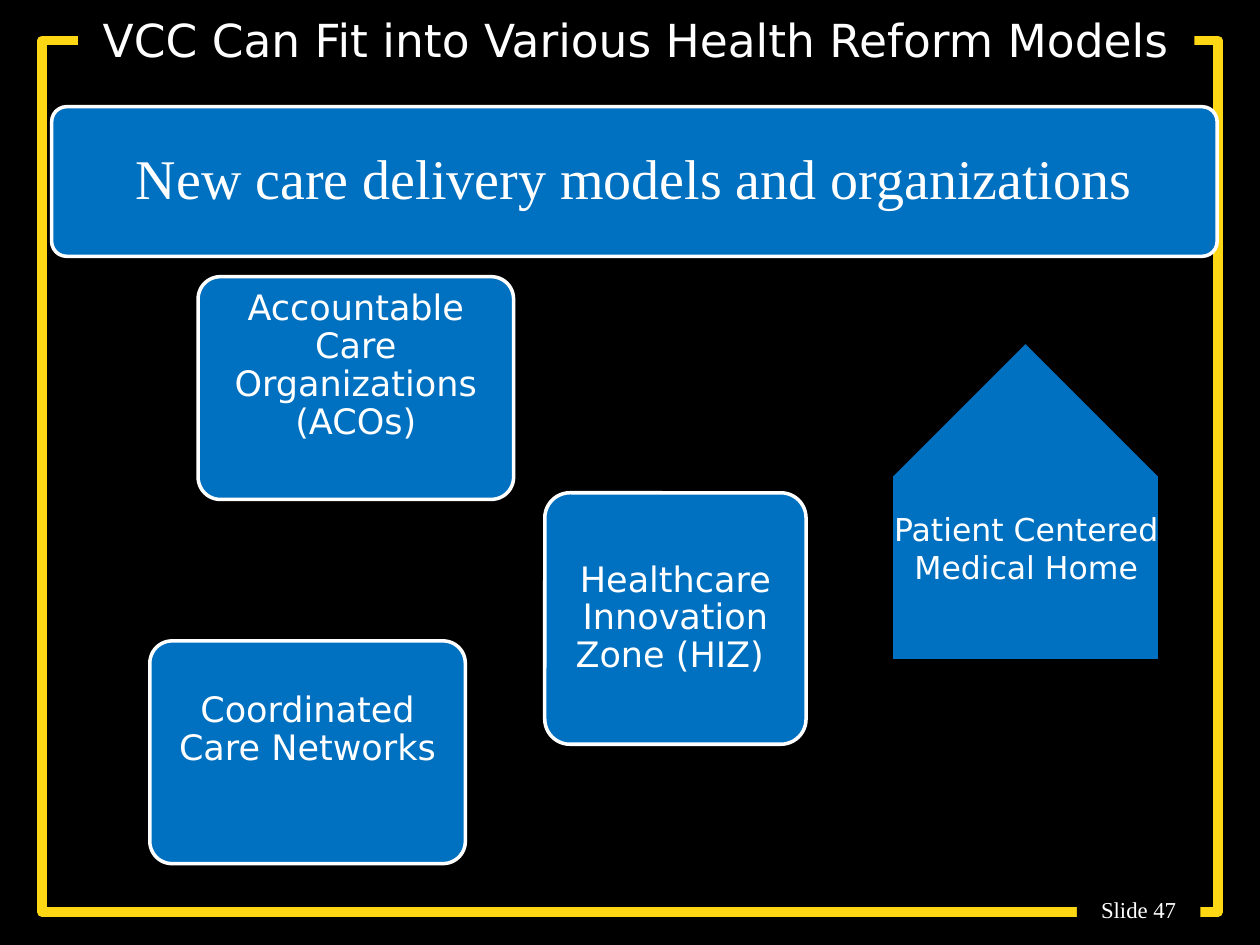
from dataclasses import dataclass

from pptx import Presentation
from pptx.dml.color import RGBColor as RGB
from pptx.enum.shapes import MSO_SHAPE as Shape
from pptx.enum.text import MSO_ANCHOR as Anchor, PP_ALIGN as Align
from pptx.util import Pt


@dataclass(frozen=True)
class Theme:
    black: RGB = RGB.from_string("000000")
    white: RGB = RGB.from_string("FFFFFF")
    blue: RGB = RGB.from_string("0070C0")
    yellow: RGB = RGB.from_string("FED714")
    sans: str = "DejaVu Sans"
    serif: str = "Times New Roman"
    title: int = 26
    banner: int = 32
    card: int = 20
    home: int = 18
    footer: int = 13


T = Theme()


def write(sp, lines, size, font=T.sans, anchor=Anchor.TOP, inset=None,
          extra_bottom=0, spacing=None, wrap=True):
    """Fill a shape with centred white paragraphs."""
    tf = sp.text_frame
    tf.word_wrap = wrap
    tf.vertical_anchor = anchor
    if inset is not None:
        tf.margin_left = tf.margin_right = tf.margin_top = Pt(inset)
        tf.margin_bottom = Pt(inset + extra_bottom)
    for i, line in enumerate(lines):
        p = tf.add_paragraph() if i else tf.paragraphs[0]
        p.alignment = Align.CENTER
        if spacing:
            p.line_spacing = spacing
        r = p.add_run()
        r.text = line
        r.font.size, r.font.name = Pt(size), font
        r.font.color.rgb = T.white


def add_shape(s, kind, box, fill=None, line=None, width=0):
    sp = s.shapes.add_shape(kind, *map(Pt, box))
    sp.shadow.inherit = False
    if fill is None:
        sp.fill.background()
    else:
        sp.fill.solid()
        sp.fill.fore_color.rgb = fill
    if line is None:
        sp.line.fill.background()
    else:
        sp.line.color.rgb = line
        sp.line.width = Pt(width)
    return sp


def add_frame(s, box):
    """Yellow border, interrupted by the slide number."""
    x, y, w, h = box
    add_shape(s, Shape.RECTANGLE, box, line=T.yellow, width=5.35)
    label = add_shape(s, Shape.RECTANGLE,
                      (x + w - 80.7, y + h - 13, 70.6, 23), fill=T.black)
    write(label, ["Slide 47"], T.footer, T.serif)


def add_title(s, box, text):
    sp = add_shape(s, Shape.RECTANGLE, box, fill=T.black)
    write(sp, [text], T.title, anchor=Anchor.BOTTOM)


def add_card(s, box, text, size=T.card, font=T.sans, inset=6, extra_bottom=0):
    sp = add_shape(s, Shape.ROUNDED_RECTANGLE, box, T.blue, T.white, 2)
    sp.adjustments[0] = 0.1
    write(sp, [text], size, font, Anchor.MIDDLE, inset, extra_bottom, 0.9)


def add_home(s, box, lines):
    """House outline: a pentagon arrow turned to point upwards."""
    x, y, w, h = box
    turned = (x + (w - h) / 2, y + (h - w) / 2, h, w)
    sp = add_shape(s, Shape.PENTAGON, turned, T.blue, T.black, 0.75)
    sp.rotation = 270
    sp.adjustments[0] = 0.5
    tb = s.shapes.add_textbox(Pt(x - 6.5), Pt(y + 92), Pt(w + 14), Pt(50.4))
    write(tb, lines, T.home, wrap=False)


def main():
    prs = Presentation()
    prs.slide_width, prs.slide_height = Pt(720), Pt(540)
    s = prs.slides.add_slide(prs.slide_layouts[6])
    s.background.fill.solid()
    s.background.fill.fore_color.rgb = T.black

    add_frame(s, (24, 23.2, 672, 498))
    add_title(s, (44.6, 3.6, 638, 38),
              "VCC Can Fit into Various Health Reform Models")
    add_card(s, (29.5, 61, 666, 85.5),
             "New care delivery models and organizations",
             T.banner, T.serif, inset=9.6)
    add_card(s, (113.2, 158.1, 180.3, 127.3),
             "Accountable Care Organizations (ACOs)", extra_bottom=25)
    add_card(s, (311.3, 281.6, 149.3, 143.7),
             "Healthcare Innovation Zone (HIZ) ")
    add_home(s, (509.8, 196, 152.4, 181), ["Patient Centered", "Medical Home"])
    add_card(s, (85.6, 366.2, 180.3, 127.3),
             "Coordinated Care Networks", extra_bottom=25)
    prs.save("out.pptx")


if __name__ == "__main__":
    main()
